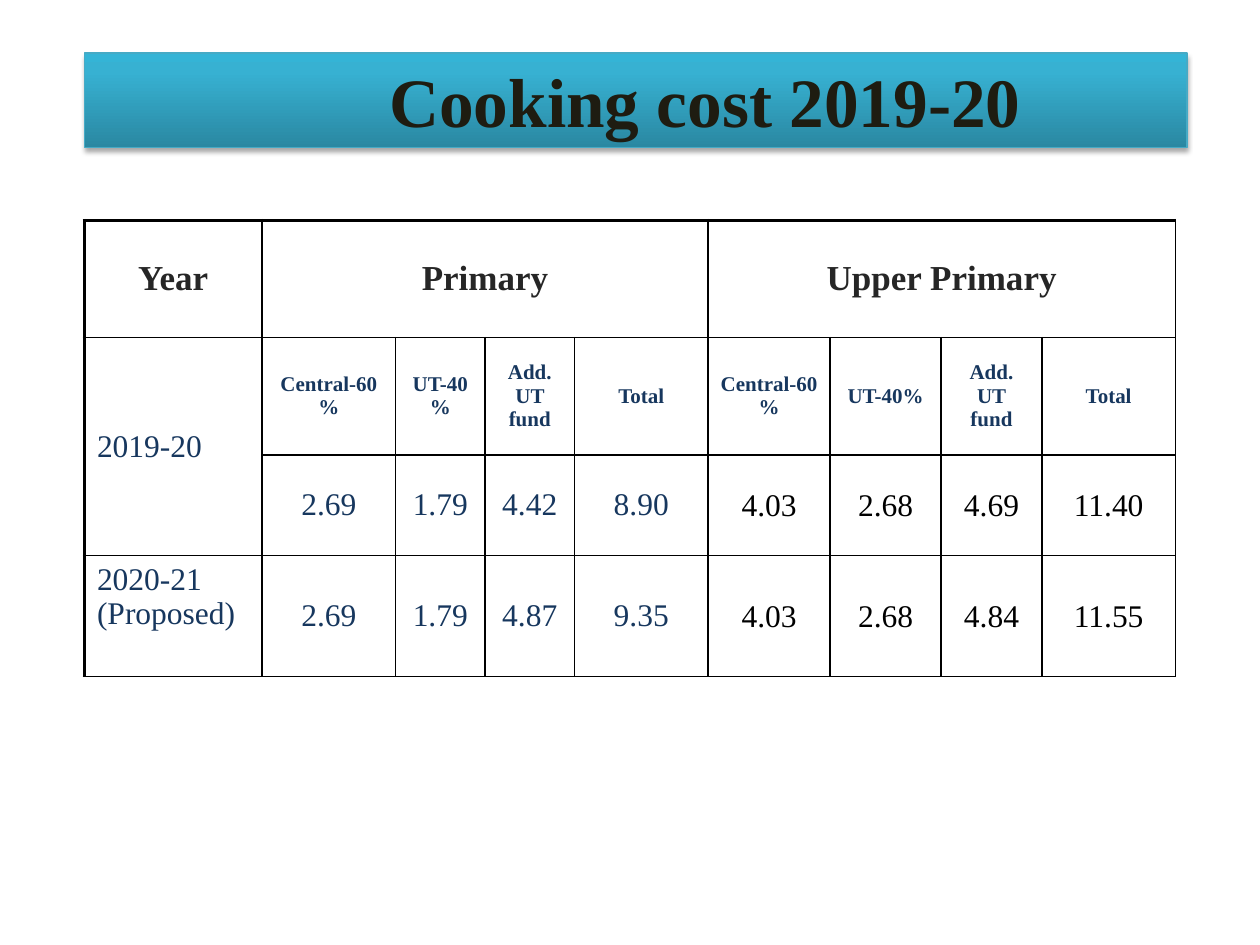
from copy import deepcopy

from lxml import etree
from pptx import Presentation
from pptx import util as u
from pptx.dml.color import RGBColor
from pptx.enum import text
from pptx.oxml import parse_xml
from pptx.oxml.ns import nsdecls, qn

FONT = "Times New Roman"
NAVY, BLACK = "17375E", "000000"


def rgb(value):
    return RGBColor.from_string(value)


def add_border(cell, side, width):
    ln = etree.SubElement(cell._tc.get_or_add_tcPr(), qn("a:ln" + side), w=str(u.Pt(width)))
    fill = etree.SubElement(ln, qn("a:solidFill"))
    etree.SubElement(fill, qn("a:srgbClr"), val=BLACK)


prs = Presentation()
prs.slide_width, prs.slide_height = u.Inches(10), u.Inches(7.5)
s = prs.slides.add_slide(prs.slide_layouts[5])

# Title banner
sp = s.shapes.title
sp.left, sp.top = u.Inches(0.67), u.Inches(0.42)
sp.width, sp.height = u.Inches(8.75), u.Inches(0.75)
sp.fill.gradient()
sp.fill.gradient_angle = 90
stops = sp._element.spPr.find(".//" + qn("a:gsLst"))
stops.append(deepcopy(stops[0]))
for stop, (color, position) in zip(
    sp.fill.gradient_stops, [("2A88A2", 0), ("37B1D2", 0.8), ("34B4D6", 1)]
):
    stop.color.rgb, stop.position = rgb(color), position
sp.line.color.rgb = rgb("46AAC5")
sp.line.width = u.Pt(0.75)
sp._element.spPr.append(parse_xml(
    f'<a:effectLst {nsdecls("a")}>'
    f'<a:outerShdw blurRad="{u.Pt(3.1)}" dist="{u.Pt(1.8)}" dir="5400000" rotWithShape="0">'
    '<a:srgbClr val="000000"><a:alpha val="35000"/></a:srgbClr>'
    '</a:outerShdw></a:effectLst>'
))
tf = sp.text_frame
tf.text = "Cooking cost 2019-20"
tf.auto_size = text.MSO_AUTO_SIZE.NONE
tf.vertical_anchor = text.MSO_ANCHOR.MIDDLE
tf.margin_left = u.Inches(1.2)
p = tf.paragraphs[0]
p.alignment = text.PP_ALIGN.CENTER
font = p.runs[0].font
font.name, font.size, font.bold = FONT, u.Pt(39.6), True
font.color.rgb = rgb("1E1C11")

# Cost table
parts = ["Central-60%", "UT-40%", "Add. UT fund", "Total"]
rows = [
    ["Year", "Primary", "", "", "", "Upper Primary", "", "", ""],
    ["2019-20"] + parts * 2,
    ["", "2.69", "1.79", "4.42", "8.90", "4.03", "2.68", "4.69", "11.40"],
    ["2020-21 (Proposed)", "2.69", "1.79", "4.87", "9.35", "4.03", "2.68", "4.84", "11.55"],
]
col_widths = [1.41, 1.06, 0.71, 0.71, 1.06, 0.97, 0.88, 0.8, 1.06]
row_heights = [0.93, 0.93, 0.8, 0.96]
frame = s.shapes.add_table(
    len(rows), len(col_widths), u.Inches(0.67), u.Inches(1.75),
    u.Inches(sum(col_widths)), u.Inches(sum(row_heights)),
)
table = frame.table
table.first_row = table.horz_banding = False
for col, width in zip(table.columns, col_widths):
    col.width = u.Inches(width)
for row, height in zip(table.rows, row_heights):
    row.height = u.Inches(height)

for i, values in enumerate(rows):
    for j, value in enumerate(values):
        cell = table.cell(i, j)
        add_border(cell, "L", 2.25 if j == 0 else 1)
        add_border(cell, "R", 1)
        add_border(cell, "T", 2.25 if i == 0 else 1)
        add_border(cell, "B", 1)
        cell.fill.background()
        cell.vertical_anchor = text.MSO_ANCHOR.MIDDLE
        if not value:
            continue

        # Header, sub-header and value styles
        upper_value = i >= 2 and j >= 5
        if i == 0:
            size, color, bold = 20, "262626", True
        elif i == 1 and j > 0:
            size, color, bold = 12, NAVY, True
        else:
            size, color, bold = 18, BLACK if upper_value else NAVY, False
        if upper_value:
            cell.margin_left = cell.margin_right = cell.margin_top = u.Inches(0.01)
            cell.margin_bottom = 0
        cell.text_frame.text = value
        p = cell.text_frame.paragraphs[0]
        year_label = j == 0 and i > 0
        p.alignment = text.PP_ALIGN.LEFT if year_label else text.PP_ALIGN.CENTER
        font = p.runs[0].font
        font.name, font.size, font.bold = FONT, u.Pt(size), bold
        font.color.rgb = rgb(color)

table.cell(3, 0).vertical_anchor = text.MSO_ANCHOR.TOP

# Merged headings
for first, last in [((0, 1), (0, 4)), ((0, 5), (0, 8)), ((1, 0), (2, 0))]:
    table.cell(*first).merge(table.cell(*last))

prs.save("out.pptx")
